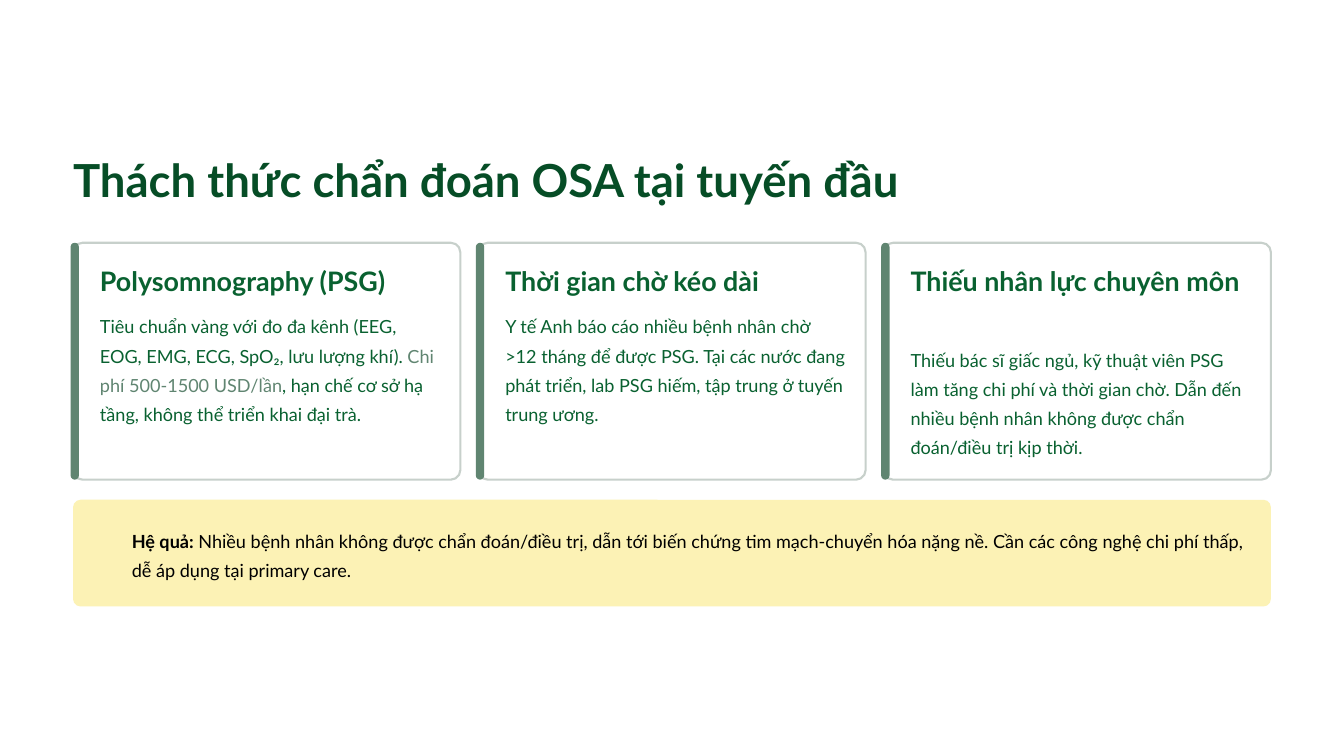
"""Build the slide on the challenges of diagnosing OSA in primary care."""
from pptx import Presentation
from pptx.dml.color import RGBColor
from pptx.enum.shapes import MSO_SHAPE
from pptx.enum.text import MSO_ANCHOR, MSO_AUTO_SIZE, PP_ALIGN
from pptx.util import Inches, Pt

ROUNDED = MSO_SHAPE.ROUNDED_RECTANGLE
TOP = MSO_ANCHOR.TOP
LEFT = PP_ALIGN.LEFT
NO_AUTOFIT = MSO_AUTO_SIZE.NONE

TITLE_GREEN = "064D26"
GREEN = "096130"
SAGE = "608571"
BORDER = "C7D0CB"
YELLOW = "FCF2B5"
WHITE = "FFFFFF"
BLACK = "000000"

MARGIN, CONTENT_WIDTH = 0.87, 14.26
CARD_TOP, CARD_WIDTH, CARD_HEIGHT = 2.89, 4.61, 2.82
CARD_PITCH = (CONTENT_WIDTH - CARD_WIDTH) / 2
HEADING_TOP, TEXT_WIDTH = 3.13, 4.05


def write(runs, box, holder=None, size=15.5, spacing=25, bold=False, color=GREEN):
    """Write (text, overrides) runs into a new text box or a given placeholder."""
    left, top, width, height = map(Inches, box)
    if holder is None:
        holder = slide.shapes.add_textbox(left, top, width, height)
    else:
        holder.left, holder.top, holder.width, holder.height = left, top, width, height
    frame = holder.text_frame
    frame.margin_left = frame.margin_right = frame.margin_top = frame.margin_bottom = 0
    frame.word_wrap = True
    frame.auto_size = NO_AUTOFIT
    frame.vertical_anchor = TOP
    paragraph = frame.paragraphs[0]
    paragraph.alignment = LEFT
    paragraph.line_spacing = Pt(spacing)
    for text, overrides in runs:
        run = paragraph.add_run()
        run.text = text
        run.font.name = "Lato"
        run.font.size = Pt(size)
        run.font.bold = overrides.get("bold", bold)
        run.font.color.rgb = RGBColor.from_string(overrides.get("color", color))


def panel(box, fill, corner, border=None):
    """Draw a rounded panel with an optional border."""
    shape = slide.shapes.add_shape(ROUNDED, *map(Inches, box))
    shape.shadow.inherit = False
    shape.adjustments[0] = corner
    shape.fill.solid()
    shape.fill.fore_color.rgb = RGBColor.from_string(fill)
    if border:
        shape.line.color.rgb = RGBColor.from_string(border)
        shape.line.width = Pt(1.8)
    else:
        shape.line.fill.background()


prs = Presentation()
prs.slide_width, prs.slide_height = Inches(16), Inches(9)
slide = prs.slides.add_slide(prs.slide_layouts[5])
slide.background.fill.solid()
slide.background.fill.fore_color.rgb = RGBColor.from_string(WHITE)

write([("Thách thức chẩn đoán OSA tại tuyến đầu", {})], (MARGIN, 1.78, 11.36, 0.68),
      holder=slide.shapes.title, size=39, spacing=48.5, bold=True, color=TITLE_GREEN)

challenges = [
    ("Polysomnography (PSG)", 0.41, [
        ("Tiêu chuẩn vàng với đo đa kênh (EEG, EOG, EMG, ECG, SpO₂, lưu lượng khí). ", {}),
        ("Chi phí 500-1500 USD/lần", {"color": SAGE}),
        (", hạn chế cơ sở hạ tầng, không thể triển khai đại trà.", {})]),
    ("Thời gian chờ kéo dài", 0.41, [
        ("Y tế Anh báo cáo nhiều bệnh nhân chờ >12 tháng để được PSG. Tại các nước đang "
         "phát triển, lab PSG hiếm, tập trung ở tuyến trung ương.", {})]),
    ("Thiếu nhân lực chuyên môn", 0.81, [
        ("Thiếu bác sĩ giấc ngủ, kỹ thuật viên PSG làm tăng chi phí và thời gian chờ. "
         "Dẫn đến nhiều bệnh nhân không được chẩn đoán/điều trị kịp thời.", {})]),
]
for index, (heading, heading_height, description) in enumerate(challenges):
    card_left = MARGIN + index * CARD_PITCH
    text_left = card_left + 0.32
    description_top = HEADING_TOP + heading_height + 0.13
    panel((card_left, CARD_TOP, CARD_WIDTH, CARD_HEIGHT), WHITE, 0.04, border=BORDER)
    panel((card_left - 0.03, CARD_TOP, 0.1, CARD_HEIGHT), SAGE, 0.5)
    write([(heading, {})], (text_left, HEADING_TOP, TEXT_WIDTH, heading_height),
          size=23, spacing=29, bold=True)
    write(description, (text_left, description_top, TEXT_WIDTH, 1.39))

panel((MARGIN, 5.95, CONTENT_WIDTH, 1.27), YELLOW, 0.07)
write([("Hệ quả:", {"bold": True}),
       (" Nhiều bệnh nhân không được chẩn đoán/điều trị, dẫn tới biến chứng tim mạch-chuyển "
        "hóa nặng nề. Cần các công nghệ chi phí thấp, dễ áp dụng tại primary care.", {})],
      (1.57, 6.22, 13.34, 0.69), color=BLACK)

prs.save("out.pptx")
